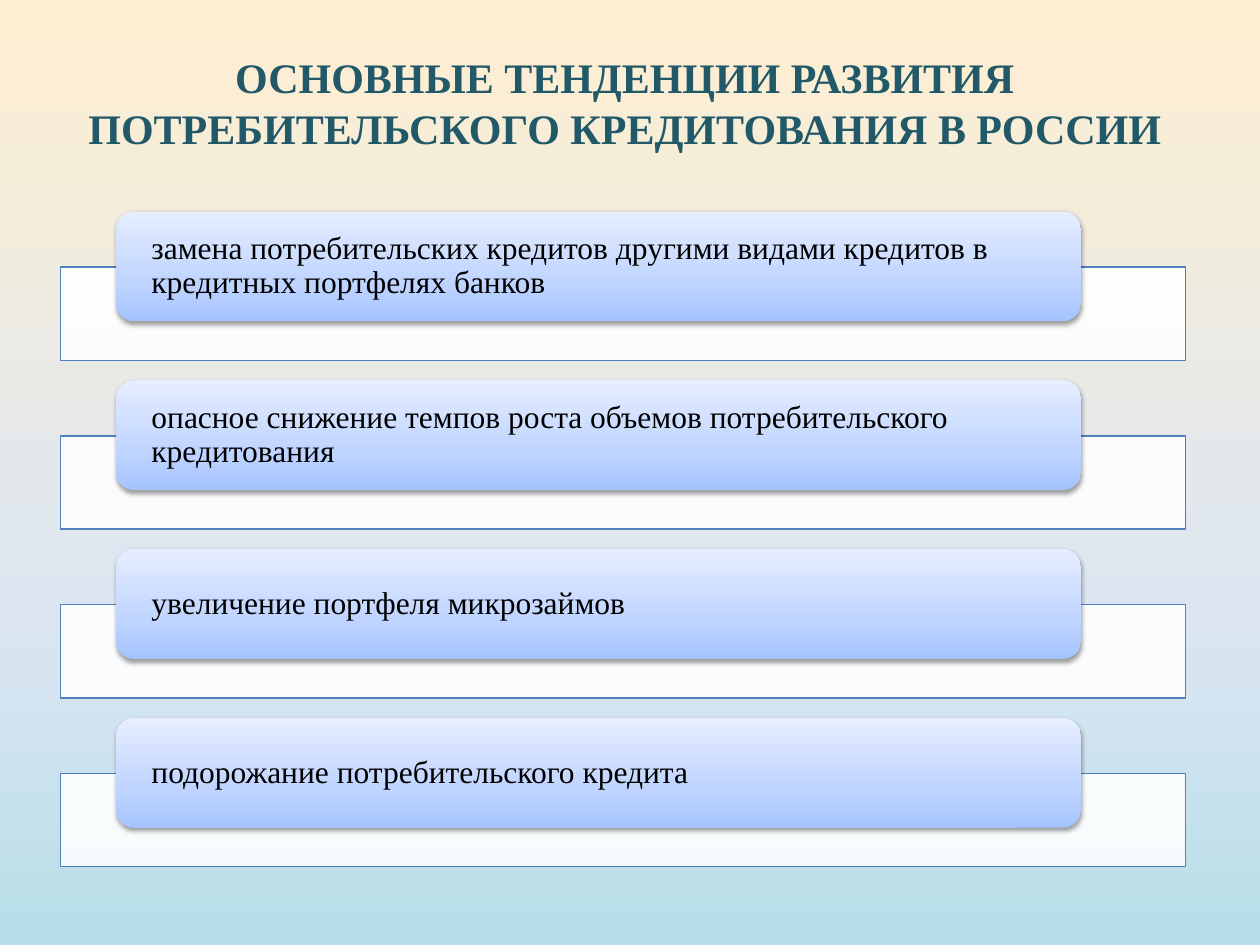
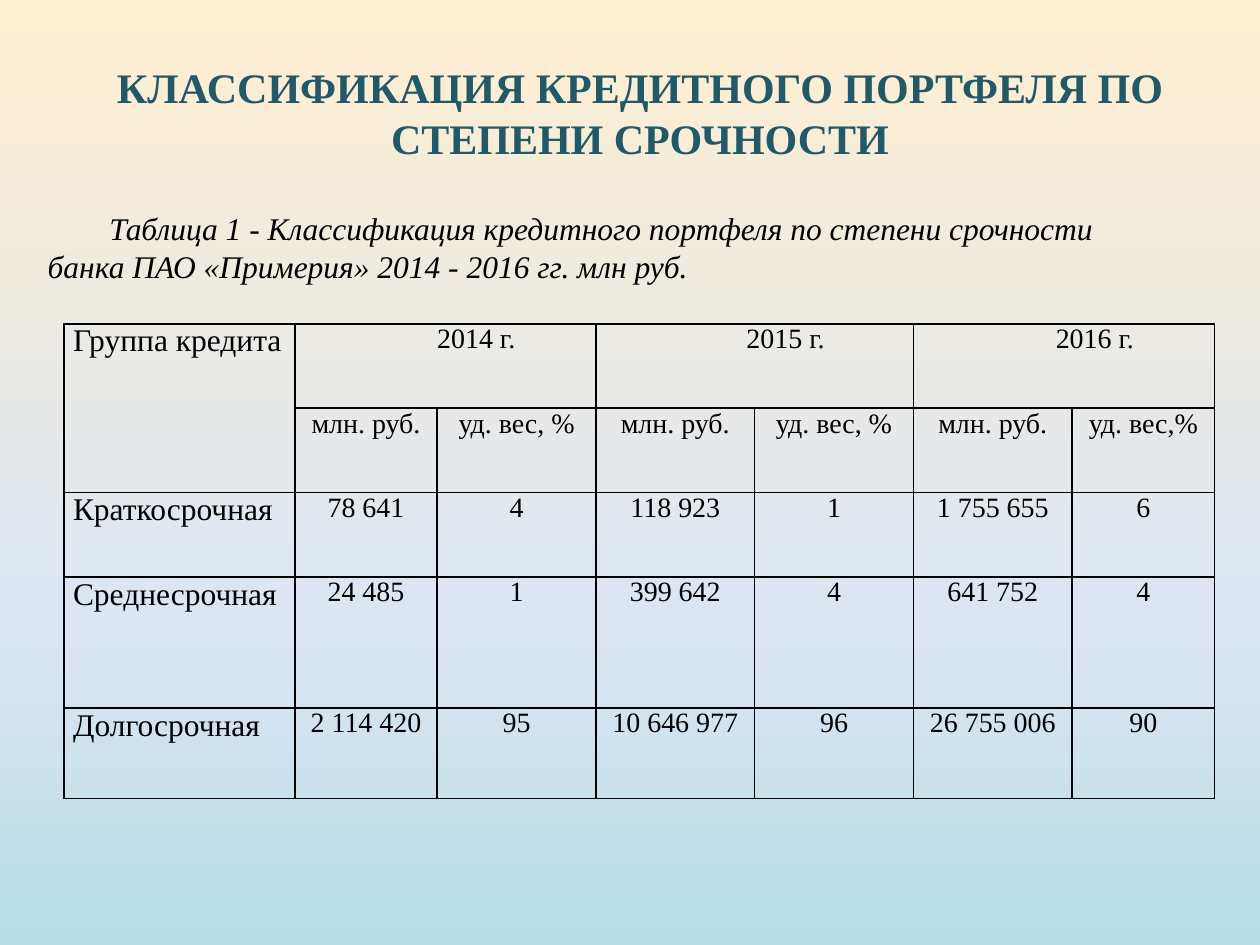
from lxml import etree
from pptx import Presentation
from pptx import util as u
from pptx.dml.color import RGBColor
from pptx.enum import shapes, text
from pptx.oxml.ns import qn

COLORS = {
    "title": "215968", "ink": "000000", "paper": "FFFFFF", "outline": "4F81BD",
    "cream": "FFEFD1", "mist": "DCE6F2", "aqua": "B7DEE8",
    "card_low": "A4C4FF", "card_mid": "BFD4FF", "card_high": "E6EEFF",
}
FONT = "Times New Roman"
TITLE = {"name": FONT, "size": u.Pt(24), "bold": True}
BODY = {"name": FONT, "size": u.Pt(18)}
FIGURE = {"name": FONT, "size": u.Pt(16)}
CAPTION = {**BODY, "italic": True}
CENTER = text.PP_ALIGN.CENTER
LEFT = text.PP_ALIGN.LEFT
FIRST_LINE = u.Inches(0.49)

TRENDS = [
    "замена потребительских кредитов другими видами кредитов в кредитных портфелях банков",
    "опасное снижение темпов роста объемов потребительского кредитования",
    "увеличение портфеля микрозаймов",
    "подорожание потребительского кредита",
]
YEARS = ["2014 г.", "2015 г.", "2016 г."]
MEASURES = ["млн. руб.", "уд. вес, %", "млн. руб.", "уд. вес, %", "млн. руб.", "уд. вес,%"]
LOANS = [
    ["Краткосрочная", "78 641", "4", "118 923", "1", "1 755 655", "6"],
    ["Среднесрочная", "24 485", "1", "399 642", "4", "641 752", "4"],
    ["Долгосрочная", "2 114 420", "95", "10 646 977", "96", "26 755 006", "90"],
]
COLUMN_WIDTHS = [1.83, 1.13, 1.26, 1.26, 1.26, 1.26, 1.13]
ROW_HEIGHTS = [0.67, 0.67, 0.67, 1.04, 0.72]


def box(left, top, width, height):
    return [u.Inches(side) for side in (left, top, width, height)]


def apply_format(target, values):
    for key, value in values.items():
        setattr(target, key, value)


def add_color(parent, color, alpha=None):
    tint = etree.SubElement(parent, qn("a:srgbClr"), val=COLORS[color])
    if alpha is not None:
        etree.SubElement(tint, qn("a:alpha"), val=str(alpha * 1000))


def set_gradient(fill, owner, angle, stops):
    fill.gradient()
    fill.gradient_angle = angle
    stop_list = owner.find(".//" + qn("a:gsLst"))
    stop_list.clear()
    for position, color in stops:
        stop = etree.SubElement(stop_list, qn("a:gs"), pos=str(position * 1000))
        add_color(stop, color)


class Deck:
    def __init__(self):
        self.prs = Presentation()
        self.prs.slide_width, self.prs.slide_height = u.Inches(10), u.Inches(7.5)
        master = self.prs.slide_master
        set_gradient(master.background.fill, master.element, 270,
                     [(0, "cream"), (65, "mist"), (100, "aqua")])
        self.slide = None

    def add_words(self, paragraph, words, style, color="ink", align=LEFT, indent=0):
        run = paragraph.add_run()
        run.text = words
        apply_format(run.font, style)
        run.font.color.rgb = RGBColor.from_string(COLORS[color])
        paragraph.alignment = align
        if indent:
            properties = paragraph._p.get_or_add_pPr()
            properties.set("marL", "0")
            properties.set("indent", str(indent))

    def start(self, heading, place):
        self.slide = self.prs.slides.add_slide(self.prs.slide_layouts[5])
        title = self.slide.shapes.title
        apply_format(title, dict(zip(("left", "top", "width", "height"), box(*place))))
        apply_format(title.text_frame, {
            "vertical_anchor": text.MSO_ANCHOR.TOP, "word_wrap": True,
            "auto_size": text.MSO_AUTO_SIZE.SHAPE_TO_FIT_TEXT})
        self.add_words(title.text_frame.paragraphs[0], heading, TITLE, "title", CENTER)

    def shape(self, kind, place):
        figure = self.slide.shapes.add_shape(kind, *box(*place))
        figure.shadow.inherit = False
        return figure

    def strip(self, place):
        strip = self.shape(shapes.MSO_SHAPE.RECTANGLE, place)
        strip.fill.solid()
        strip.fill.fore_color.rgb = RGBColor.from_string(COLORS["paper"])
        tint = strip._element.spPr.find(qn("a:solidFill")).find(qn("a:srgbClr"))
        etree.SubElement(tint, qn("a:alpha"), val="90000")
        strip.line.color.rgb = RGBColor.from_string(COLORS["outline"])
        strip.line.width = u.Pt(0.75)

    def card(self, place, words):
        card = self.shape(shapes.MSO_SHAPE.ROUNDED_RECTANGLE, place)
        set_gradient(card.fill, card._element.spPr, 90,
                     [(0, "card_low"), (35, "card_mid"), (100, "card_high")])
        card.line.fill.background()
        effects = card._element.spPr.find(qn("a:effectLst"))
        shadow = etree.SubElement(effects, qn("a:outerShdw"), blurRad=str(u.Pt(3.1)),
                                  dist=str(u.Pt(1.6)), dir="5400000", rotWithShape="0")
        add_color(shadow, "ink", 38)
        apply_format(card.text_frame, {
            "word_wrap": True, "vertical_anchor": text.MSO_ANCHOR.MIDDLE,
            "margin_left": u.Inches(0.24), "margin_right": u.Inches(0.24),
            "margin_top": 0, "margin_bottom": 0})
        paragraph = card.text_frame.paragraphs[0]
        paragraph.line_spacing = 0.9
        self.add_words(paragraph, words, BODY)

    def caption(self, place, words):
        frame = self.slide.shapes.add_textbox(*box(*place)).text_frame
        apply_format(frame, {"word_wrap": True,
                             "auto_size": text.MSO_AUTO_SIZE.SHAPE_TO_FIT_TEXT})
        paragraph = frame.paragraphs[0]
        paragraph.space_after = u.Pt(10)
        self.add_words(paragraph, words, CAPTION, indent=FIRST_LINE)

    def table(self, left, top, widths, heights):
        place = box(left, top, sum(widths), sum(heights))
        grid = self.slide.shapes.add_table(len(heights), len(widths), *place).table
        apply_format(grid, {"first_row": False, "horz_banding": False})
        for column, width in zip(grid.columns, widths):
            column.width = u.Inches(width)
        for row, height in zip(grid.rows, heights):
            row.height = u.Inches(height)
        for cell in grid.iter_cells():
            apply_format(cell, {"margin_left": u.Inches(0.07), "margin_right": u.Inches(0.07),
                                "margin_top": 0, "margin_bottom": 0})
            self.border(cell)
            cell.fill.background()
        return grid

    def border(self, cell):
        properties = cell._tc.get_or_add_tcPr()
        for side in ("lnL", "lnR", "lnT", "lnB"):
            line = etree.SubElement(properties, qn("a:" + side), w=str(u.Pt(1)))
            add_color(etree.SubElement(line, qn("a:solidFill")), "ink")

    def cell(self, cell, words, style=FIGURE, align=CENTER, indent=0):
        self.add_words(cell.text_frame.paragraphs[0], words, style, align=align, indent=indent)


def build_trends(deck):
    deck.start("ОСНОВНЫЕ ТЕНДЕНЦИИ РАЗВИТИЯ ПОТРЕБИТЕЛЬСКОГО КРЕДИТОВАНИЯ В РОССИИ",
               (0.51, 0.36, 8.9, 0.91))
    for number, trend in enumerate(TRENDS):
        top = 1.68 + number * 1.34
        deck.strip((0.48, top + 0.44, 8.93, 0.74))
        deck.card((0.92, top, 7.66, 0.87), trend)


def build_portfolio(deck):
    deck.start("КЛАССИФИКАЦИЯ КРЕДИТНОГО ПОРТФЕЛЯ ПО СТЕПЕНИ СРОЧНОСТИ",
               (0.67, 0.44, 8.82, 0.91))
    portfolio = deck.table(0.51, 2.57, COLUMN_WIDTHS, ROW_HEIGHTS)
    portfolio.cell(0, 0).merge(portfolio.cell(1, 0))
    deck.cell(portfolio.cell(0, 0), "Группа кредита", BODY, LEFT)
    for column, year in zip((1, 3, 5), YEARS):
        portfolio.cell(0, column).merge(portfolio.cell(0, column + 1))
        deck.cell(portfolio.cell(0, column), year, indent=FIRST_LINE)
    for column, measure in enumerate(MEASURES, 1):
        deck.cell(portfolio.cell(1, column), measure)
    for row, (group, *figures) in enumerate(LOANS, 2):
        deck.cell(portfolio.cell(row, 0), group, BODY, LEFT)
        for column, figure in enumerate(figures, 1):
            deck.cell(portfolio.cell(row, column), figure)
    deck.caption((0.28, 1.61, 9.06, 0.71),
                 "Таблица 1 - Классификация кредитного портфеля по степени срочности "
                 "банка ПАО «Примерия» 2014 - 2016 гг. млн руб.")


def main():
    deck = Deck()
    build_trends(deck)
    build_portfolio(deck)
    deck.prs.save("out.pptx")


if __name__ == "__main__":
    main()
